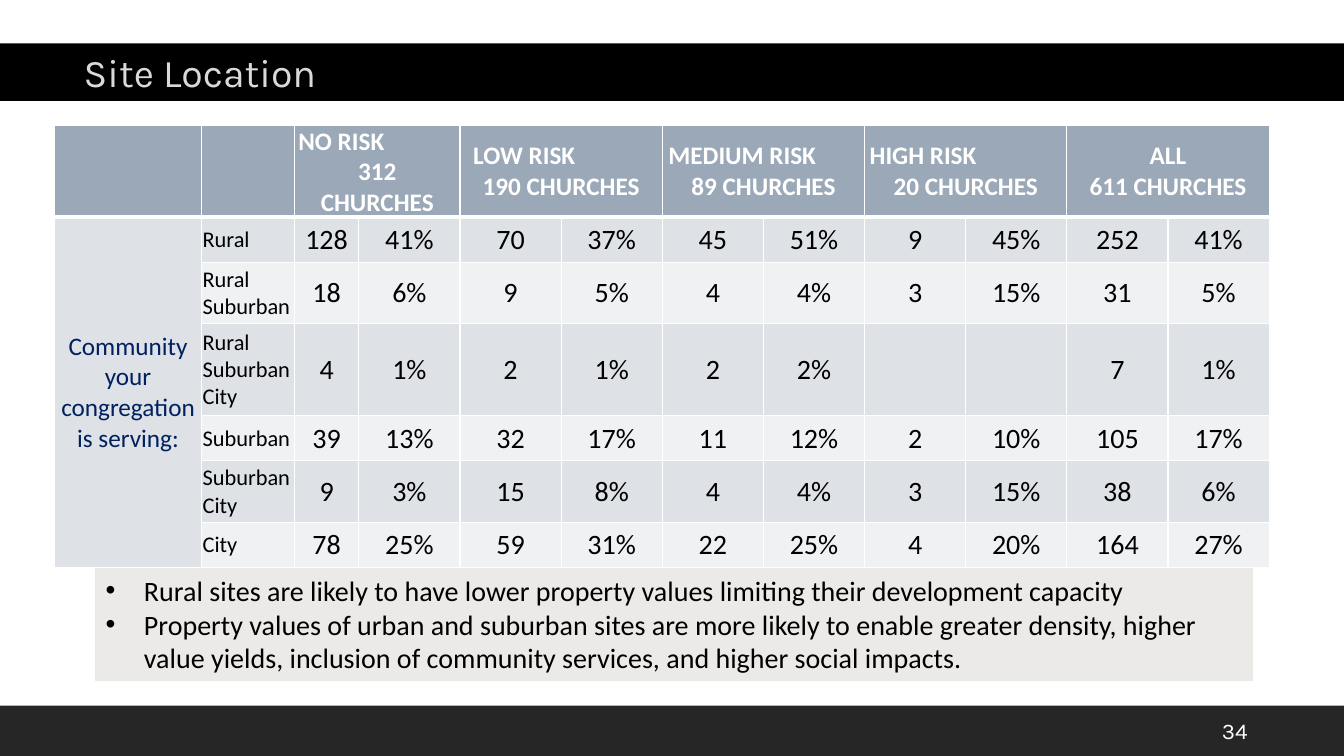
from lxml import etree
from pptx import Presentation
from pptx.dml.color import RGBColor as RGB
from pptx.enum.shapes import MSO_SHAPE as Shape
from pptx.enum.text import MSO_ANCHOR as Anchor, MSO_AUTO_SIZE as Auto, PP_ALIGN as Align
from pptx.oxml.ns import qn
from pptx.util import Inches, Pt

BLACK = RGB(0x00, 0x00, 0x00)
WHITE = RGB(0xFF, 0xFF, 0xFF)
DARK = RGB(0x26, 0x26, 0x26)
PALE = RGB(0xD9, 0xD9, 0xD9)
NAVY = RGB(0x00, 0x20, 0x60)
HEAD = RGB(0x9B, 0xA8, 0xB7)
BANDS = RGB(0xDE, 0xE1, 0xE6), RGB(0xEF, 0xF1, 0xF3)
SAND = RGB(0xEC, 0xEA, 0xE8)
EDGE = RGB(0xE9, 0xEA, 0xE4)

# Name, count of churches, indent of the name (None centres it)
GROUPS = [
    ("NO RISK", "312\vCHURCHES", 0.03),
    ("LOW RISK", "190 CHURCHES", 0.12),
    ("MEDIUM RISK", "89 CHURCHES", 0.05),
    ("HIGH RISK", "20 CHURCHES", 0.04),
    ("ALL", "611 CHURCHES", None),
]
SITES = [
    ("Rural", "128 41% 70 37% 45 51% 9 45% 252 41%"),
    ("Rural Suburban", "18 6% 9 5% 4 4% 3 15% 31 5%"),
    ("Rural Suburban City", "4 1% 2 1% 2 2% - - 7 1%"),
    ("Suburban", "39 13% 32 17% 11 12% 2 10% 105 17%"),
    ("Suburban City", "9 3% 15 8% 4 4% 3 15% 38 6%"),
    ("City", "78 25% 59 31% 22 25% 4 20% 164 27%"),
]
HEIGHTS = [0.61, 0.45, 0.61, 0.91, 0.45, 0.61, 0.45]
NOTES = [
    "Rural sites are likely to have lower property values limiting their "
    "development capacity",
    "Property values of urban and suburban sites are more likely to enable "
    "greater density, higher value yields, inclusion of community services, "
    "and higher social impacts.",
]


def write(frame, *texts, size=20, color=BLACK, font="Calibri", bold=False,
          align=Align.LEFT):
    """Write one paragraph for each text and return the paragraphs."""
    frame.word_wrap = True
    for i, text in enumerate(texts):
        par = frame.add_paragraph() if i else frame.paragraphs[0]
        par.text = text
        par.alignment = align
        for run in par.runs:
            run.font.name = font
            run.font.size = Pt(size)
            run.font.bold = bold
            run.font.color.rgb = color
    return frame.paragraphs


def indent(par, left, first=0):
    props = par._p.get_or_add_pPr()
    props.set("marL", str(Inches(left)))
    props.set("indent", str(Inches(first)))
    return props


def panel(slide, box, fill, line=None):
    shape = slide.shapes.add_shape(Shape.RECTANGLE, *map(Inches, box))
    shape.shadow.inherit = False
    shape.fill.solid()
    shape.fill.fore_color.rgb = fill
    if line:
        shape.line.color.rgb = line
        shape.line.width = Pt(0.75)
    else:
        shape.line.fill.background()
    return shape


def style(cell, fill, base=1):
    """Fill a cell, set its insets and draw its white borders."""
    cell.fill.solid()
    cell.fill.fore_color.rgb = fill
    cell.vertical_anchor = Anchor.MIDDLE
    cell.margin_left = cell.margin_right = cell.margin_top = Inches(0.01)
    cell.margin_bottom = 0
    props = cell._tc.get_or_add_tcPr()
    for i, side in enumerate("LRTB"):
        line = etree.Element(qn(f"a:ln{side}"))
        line.set("w", str(Pt(base if side == "B" else 1)))
        solid = etree.SubElement(line, qn("a:solidFill"))
        etree.SubElement(solid, qn("a:srgbClr")).set("val", str(WHITE))
        props.insert(i, line)


def title(slide, box, text):
    shape = slide.shapes.title
    shape.left, shape.top, shape.width, shape.height = map(Inches, box)
    shape.fill.solid()
    shape.fill.fore_color.rgb = BLACK
    frame = shape.text_frame
    frame.auto_size = Auto.NONE
    frame.vertical_anchor = Anchor.MIDDLE
    frame.margin_left = Inches(0.83)
    write(frame, text, size=28, color=PALE, font="Karla")


def footer(slide, box, number):
    x, y, wide, high = box
    panel(slide, box, DARK)
    label = slide.shapes.add_textbox(
        Inches(x + wide - 1.31), Inches(y + 0.05), Inches(0.85), Inches(0.4))
    label.text_frame.vertical_anchor = Anchor.MIDDLE
    write(label.text_frame, number, size=16, color=WHITE, font="Karla")


def notes(slide, box, texts):
    frame = panel(slide, box, SAND, EDGE).text_frame
    frame.vertical_anchor = Anchor.TOP
    for par in write(frame, *texts):
        props = indent(par, 0.38, -0.38)
        etree.SubElement(props, qn("a:buFont")).set("typeface", "Arial")
        etree.SubElement(props, qn("a:buChar")).set("char", "•")


def grid(slide, box):
    cols = 2 + 2 * len(GROUPS)
    table = slide.shapes.add_table(
        len(HEIGHTS), cols, *map(Inches, box)).table
    fixed = [1.46, 0.92, 0.64]
    rest = (box[2] - sum(fixed)) / (cols - len(fixed))
    widths = fixed + [rest] * (cols - len(fixed))
    for col, wide in zip(table.columns, widths):
        col.width = Inches(wide)
    for i, (row, high) in enumerate(zip(table.rows, HEIGHTS)):
        row.height = Inches(high)
        for cell in row.cells:
            style(cell, BANDS[(i - 1) % 2] if i else HEAD, 1 if i else 3)

    # Header: each group spans a count and a share
    for i, (name, count, left) in enumerate(GROUPS):
        cell = table.cell(0, 2 + 2 * i)
        cell.merge(table.cell(0, 3 + 2 * i))
        pars = write(cell.text_frame, name, count, size=18, color=WHITE,
                     bold=True, align=Align.CENTER)
        if left is not None:
            pars[0].alignment = Align.LEFT
            indent(pars[0], left)

    # Row group
    side = table.cell(1, 0)
    side.merge(table.cell(len(SITES), 0))
    write(side.text_frame, "Community your congregation is serving:",
          size=18, color=NAVY, align=Align.CENTER)

    # Values
    for i, (site, values) in enumerate(SITES, 1):
        write(table.cell(i, 1).text_frame, site, size=16)
        for j, value in enumerate(values.split(), 2):
            if value != "-":
                write(table.cell(i, j).text_frame, value, align=Align.CENTER)


def main():
    deck = Presentation()
    deck.slide_width, deck.slide_height = Inches(13.33), Inches(7.5)
    slide = deck.slides.add_slide(deck.slide_layouts[5])
    title(slide, (0, 0.43, 13.33, 0.57), "Site Location")
    footer(slide, (0, 7, 13.33, 0.5), "34")
    notes(slide, (0.95, 5.64, 11.47, 1.11), NOTES)
    grid(slide, (0.54, 1.24, 12.05, sum(HEIGHTS)))
    deck.save("out.pptx")


if __name__ == "__main__":
    main()
